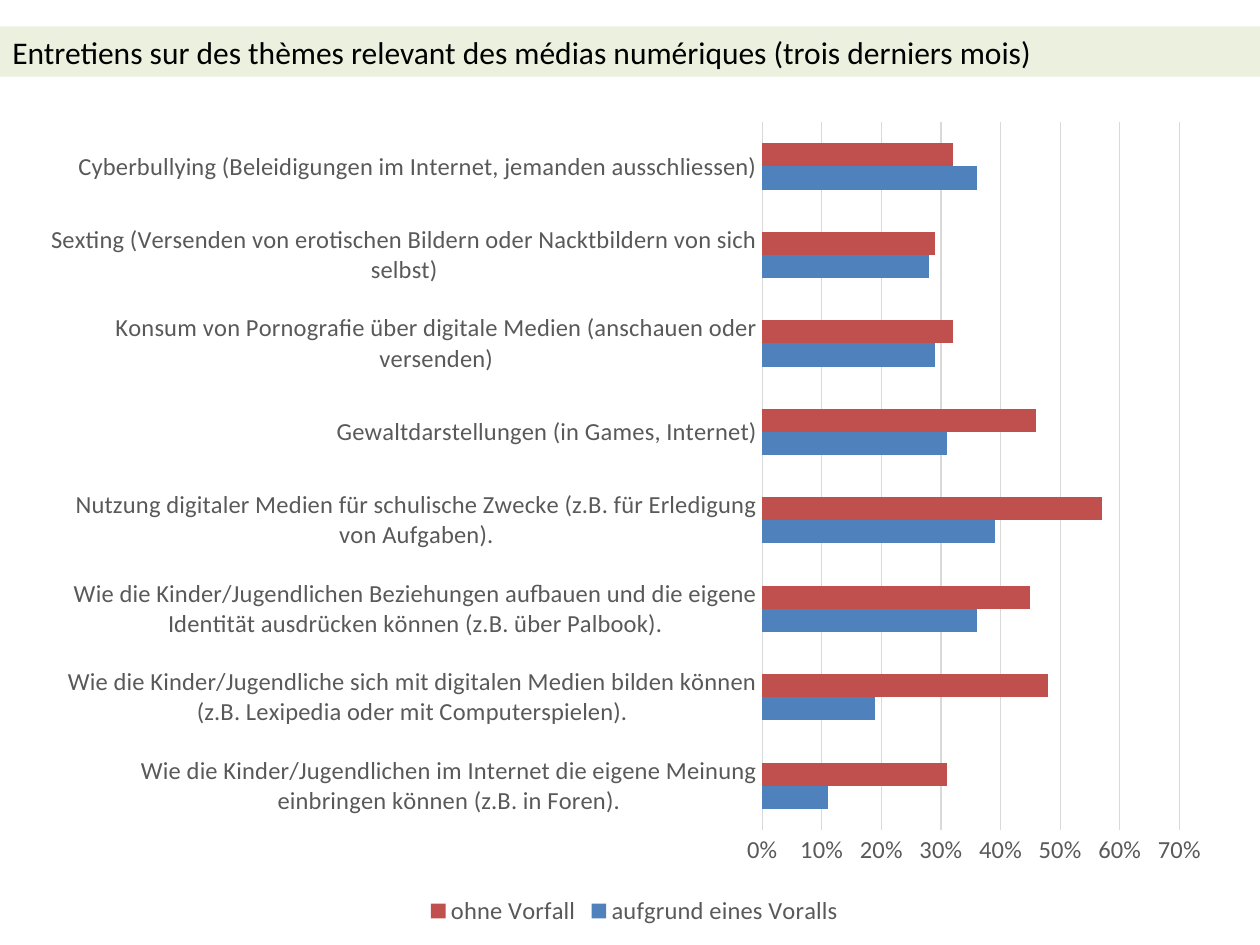
"""Build the slide on conversations about digital media topics."""
from dataclasses import dataclass

from pptx import Presentation
from pptx.chart.data import CategoryChartData
from pptx.dml.color import RGBColor
from pptx.enum.chart import XL_CHART_TYPE, XL_LEGEND_POSITION, XL_TICK_MARK
from pptx.enum.shapes import MSO_SHAPE
from pptx.enum.text import MSO_ANCHOR, PP_ALIGN
from pptx.util import Inches, Pt

BARS = XL_CHART_TYPE.BAR_CLUSTERED
BOTTOM = XL_LEGEND_POSITION.BOTTOM
NO_TICK = XL_TICK_MARK.NONE
RECTANGLE = MSO_SHAPE.RECTANGLE
MIDDLE = MSO_ANCHOR.MIDDLE
LEFT = PP_ALIGN.LEFT

WIDTH, HEIGHT = Inches(10), Inches(7.5)
FONT = "Calibri"
COLORS = {
    "band": "EBF1DE",
    "title": "000000",
    "label": "595959",
    "grid": "D9D9D9",
    "incident": "4F81BD",
    "no_incident": "C0504D",
}
TITLE = "Entretiens sur des thèmes relevant des médias numériques (trois derniers mois)"


@dataclass(frozen=True)
class Area:
    """Position and size as percentages of the slide."""
    left: float
    top: float
    width: float
    height: float

    def lengths(self) -> tuple[int, ...]:
        """Return left, top, width and height in slide units."""
        shares = (self.left, self.top, self.width, self.height)
        return tuple(int(share * side / 100) for share, side in zip(shares, (WIDTH, HEIGHT) * 2))


@dataclass(frozen=True)
class Topic:
    """A conversation topic with its shares in percent."""
    label: str
    incident: int
    no_incident: int


@dataclass(frozen=True)
class Occasion:
    """A chart series: its legend entry and its field in Topic."""
    label: str
    field: str


TOPICS = [
    Topic("Wie die Kinder/Jugendlichen im Internet die eigene Meinung einbringen können "
          "(z.B. in Foren).", 11, 31),
    Topic("Wie die Kinder/Jugendliche sich mit digitalen Medien bilden können "
          "(z.B. Lexipedia oder mit Computerspielen).", 19, 48),
    Topic("Wie die Kinder/Jugendlichen Beziehungen aufbauen und die eigene Identität "
          "ausdrücken können (z.B. über Palbook).", 36, 45),
    Topic("Nutzung digitaler Medien für schulische Zwecke (z.B. für Erledigung von Aufgaben).",
          39, 57),
    Topic("Gewaltdarstellungen (in Games, Internet)", 31, 46),
    Topic("Konsum von Pornografie über digitale Medien (anschauen oder versenden)", 29, 32),
    Topic("Sexting (Versenden von erotischen Bildern oder Nacktbildern von sich selbst)", 28, 29),
    Topic("Cyberbullying (Beleidigungen im Internet, jemanden ausschliessen)", 36, 32),
]
OCCASIONS = [
    Occasion("aufgrund eines Voralls", "incident"),
    Occasion("ohne Vorfall", "no_incident"),
]


def apply(target, formats: dict) -> None:
    """Set every attribute given in formats."""
    for attribute, value in formats.items():
        setattr(target, attribute, value)


def paint(fill, color: str) -> None:
    """Fill with a named colour."""
    fill.solid()
    fill.fore_color.rgb = RGBColor.from_string(COLORS[color])


def style_font(font, size: float, color: str) -> None:
    """Set the typeface, size and colour of a font."""
    apply(font, {"name": FONT, "size": Pt(size)})
    font.color.rgb = RGBColor.from_string(COLORS[color])


def style_line(line) -> None:
    """Draw a thin grid-coloured line."""
    line.width = Pt(0.75)
    line.color.rgb = RGBColor.from_string(COLORS["grid"])


def add_topic_chart(slide, area: Area) -> None:
    """Add the clustered bars that compare both occasions by topic."""
    shares = CategoryChartData(number_format="0%")
    shares.categories = [topic.label for topic in TOPICS]
    for occasion in OCCASIONS:
        shares.add_series(occasion.label, [getattr(topic, occasion.field) / 100 for topic in TOPICS])
    chart = slide.shapes.add_chart(BARS, *area.lengths(), shares).chart
    apply(chart, {"has_title": False, "has_legend": True})
    style_font(chart.font, 14, "title")
    apply(chart.legend, {"position": BOTTOM, "include_in_layout": False})
    style_font(chart.legend.font, 14, "label")

    bars = chart.plots[0]
    apply(bars, {"gap_width": 182, "overlap": 0, "vary_by_categories": False})
    for series, occasion in zip(bars.series, OCCASIONS):
        paint(series.format.fill, occasion.field)

    topics, percent = chart.category_axis, chart.value_axis
    for axis in (topics, percent):
        apply(axis, {"major_tick_mark": NO_TICK, "minor_tick_mark": NO_TICK})
        style_font(axis.tick_labels.font, 14, "label")
    style_line(topics.format.line)
    apply(percent, {"minimum_scale": 0, "maximum_scale": 0.7, "major_unit": 0.1,
                    "has_major_gridlines": True})
    apply(percent.tick_labels, {"number_format": "0%", "number_format_is_linked": False})
    percent.format.line.fill.background()
    style_line(percent.major_gridlines.format.line)


def add_title_band(slide, area: Area) -> None:
    """Add the full-width band that carries the title."""
    band = slide.shapes.add_shape(RECTANGLE, *area.lengths())
    band.shadow.inherit = False
    paint(band.fill, "band")
    band.line.fill.background()
    apply(band.text_frame, {"word_wrap": True, "vertical_anchor": MIDDLE, "text": TITLE})
    heading = band.text_frame.paragraphs[0]
    heading.alignment = LEFT
    style_font(heading.runs[0].font, 18, "title")


def main() -> None:
    """Build and save the slide."""
    deck = Presentation()
    apply(deck, {"slide_width": WIDTH, "slide_height": HEIGHT})
    slide = deck.slides.add_slide(deck.slide_layouts[6])
    add_topic_chart(slide, Area(3.5, 11.2, 93.7, 87.33))
    add_title_band(slide, Area(0, 2.8, 100, 5.33))
    deck.save("out.pptx")


if __name__ == "__main__":
    main()
